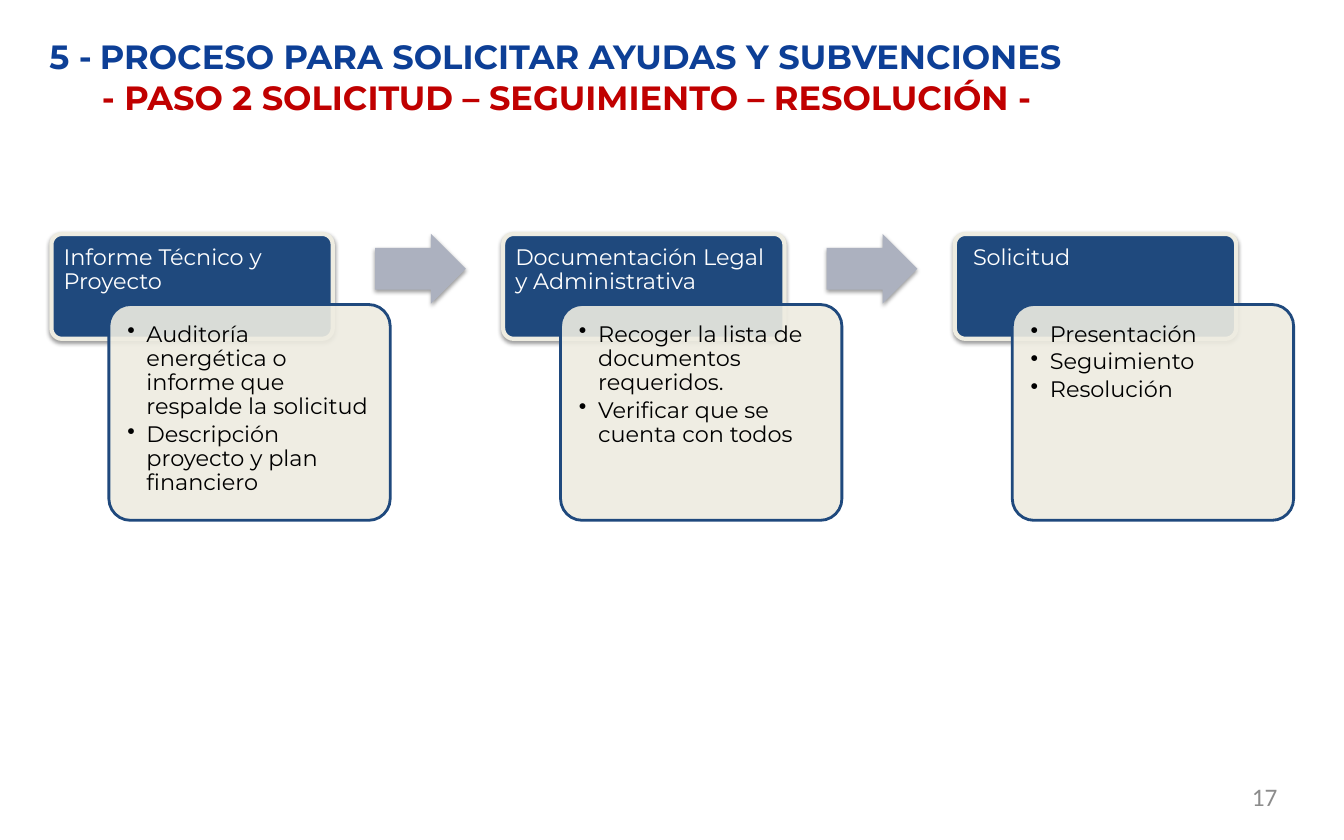
from lxml.etree import SubElement
from pptx import Presentation
from pptx.dml.color import RGBColor
from pptx.enum.shapes import MSO_SHAPE
from pptx.enum.text import MSO_ANCHOR, MSO_AUTO_SIZE, PP_ALIGN
from pptx.oxml.ns import qn
from pptx.util import Inches, Pt

NAVY, CREAM, GREY_BLUE = "1F497D", "EEECE1", "ACB1BF"
TITLE_BLUE, TITLE_RED, NUMBER_GREY = "0D3F96", "C00000", "8C8C8C"

# Grid of the process, in inches
FIRST_LEFT, COLUMN_PITCH = 0.51, 4.48
HEADER_TOP, DETAIL_TOP = 2.32, 3.02
BOX_WIDTH, HEADER_HEIGHT, DETAIL_HEIGHT = 2.79, 1.04, 2.14
DETAIL_SHIFT, ARROW_SHIFT = 0.57, 3.21

# Heading, its indent, and the details below it
STEPS = [
    ("Informe Técnico y Proyecto", 0,
     ["Auditoría energética o informe que respalde la solicitud",
      "Descripción proyecto y plan financiero"]),
    ("Documentación Legal y Administrativa", 0,
     ["Recoger la lista de documentos requeridos.",
      "Verificar que se cuenta con todos"]),
    ("Solicitud", 0.06, ["Presentación", "Seguimiento", "Resolución"]),
]


def color(hex_value):
    return RGBColor.from_string(hex_value)


def add_element(parent, tag, **attributes):
    return SubElement(parent, qn(tag), {name: str(value) for name, value in attributes.items()})


def prepare_frame(frame, inset_x, inset_y):
    frame.word_wrap = True
    frame.auto_size = MSO_AUTO_SIZE.NONE
    frame.vertical_anchor = MSO_ANCHOR.TOP
    frame.margin_left = frame.margin_right = Inches(inset_x)
    frame.margin_top = frame.margin_bottom = Inches(inset_y)


def write_paragraph(frame, text, first=False, size=16, font="Montserrat", ink="000000", bold=False,
                    align=PP_ALIGN.LEFT, spacing=1.0, after=0, indent=0, bullet=False, tab=None):
    paragraph = frame.paragraphs[0] if first else frame.add_paragraph()
    properties = paragraph._p.get_or_add_pPr()
    properties.set("marL", str(Inches(indent)))
    properties.set("indent", str(-Inches(indent) if bullet else 0))
    if bullet:
        add_element(properties, "a:buChar", char="•")
    if tab:
        add_element(add_element(properties, "a:tabLst"), "a:tab", pos=Inches(tab), algn="l")
    paragraph.alignment = align
    paragraph.line_spacing = spacing
    paragraph.space_after = Pt(after)
    run = paragraph.add_run()
    run.text = text
    run.font.size, run.font.name, run.font.bold = Pt(size), font, bold
    run.font.color.rgb = color(ink)


def add_panel(slide, kind, left, top, width, height, fill, adjustments, line=None, line_width=0):
    shape = slide.shapes.add_shape(kind, Inches(left), Inches(top), Inches(width), Inches(height))
    for index, value in enumerate(adjustments):
        shape.adjustments[index] = value
    shape.shadow.inherit = False
    shape.fill.solid()
    shape.fill.fore_color.rgb = color(fill)
    if line:
        shape.line.color.rgb = color(line)
        shape.line.width = Pt(line_width)
    else:
        shape.line.fill.background()
    return shape


def add_drop_shadow(shape):
    effects = shape.element.spPr.find(qn("a:effectLst"))
    shadow = add_element(effects, "a:outerShdw", blurRad=Pt(3.1), dist=Pt(1.6),
                         dir=5400000, rotWithShape=0)
    add_element(add_element(shadow, "a:srgbClr", val="000000"), "a:alpha", val=38000)


def set_opacity(shape, percent):
    fill = shape.element.spPr.find(qn("a:solidFill"))
    add_element(fill[0], "a:alpha", val=percent * 1000)


def add_step(slide, left, heading, heading_indent, details):
    header = add_panel(slide, MSO_SHAPE.ROUNDED_RECTANGLE, left, HEADER_TOP, BOX_WIDTH,
                       HEADER_HEIGHT, NAVY, [0.1], CREAM, 3)
    add_drop_shadow(header)
    prepare_frame(header.text_frame, 0.09, 0.09)
    write_paragraph(header.text_frame, heading, first=True, ink="FFFFFF", spacing=0.9,
                    indent=heading_indent)

    detail = add_panel(slide, MSO_SHAPE.ROUNDED_RECTANGLE, left + DETAIL_SHIFT, DETAIL_TOP,
                       BOX_WIDTH, DETAIL_HEIGHT, CREAM, [0.1], NAVY, 2)
    set_opacity(detail, 90)
    prepare_frame(detail.text_frame, 0.12, 0.12)
    for index, text in enumerate(details):
        write_paragraph(detail.text_frame, text, first=index == 0, spacing=0.9, after=2.4,
                        indent=0.19, bullet=True)


def add_arrow(slide, left):
    arrow = add_panel(slide, MSO_SHAPE.RIGHT_ARROW, left, HEADER_TOP, 0.9, 0.69,
                      GREY_BLUE, [0.6, 0.5])
    add_drop_shadow(arrow)


def format_title(title):
    title.left, title.top = Inches(0.39), Inches(0.31)
    title.width, title.height = Inches(11.2), Inches(0.91)
    prepare_frame(title.text_frame, 0.1, 0.05)
    write_paragraph(title.text_frame, "5 -\tPROCESO PARA SOLICITAR AYUDAS Y SUBVENCIONES",
                    first=True, size=24, ink=TITLE_BLUE, bold=True, tab=0.7)
    write_paragraph(title.text_frame, "- PASO 2 SOLICITUD – SEGUIMIENTO – RESOLUCIÓN -",
                    size=24, ink=TITLE_RED, bold=True, indent=0.52)


def add_page_number(slide, number):
    box = slide.shapes.add_textbox(Inches(9.6), Inches(7.75), Inches(3.07), Inches(0.42))
    prepare_frame(box.text_frame, 0, 0)
    write_paragraph(box.text_frame, number, first=True, size=18, font="Calibri",
                    ink=NUMBER_GREY, align=PP_ALIGN.RIGHT)


def main():
    presentation = Presentation()
    presentation.slide_width, presentation.slide_height = Inches(13.33), Inches(8.33)
    slide = presentation.slides.add_slide(presentation.slide_layouts[5])
    format_title(slide.shapes.title)
    for column, (heading, heading_indent, details) in enumerate(STEPS):
        left = FIRST_LEFT + column * COLUMN_PITCH
        add_step(slide, left, heading, heading_indent, details)
        if column < len(STEPS) - 1:
            add_arrow(slide, left + ARROW_SHIFT)
    add_page_number(slide, "17")
    presentation.save("out.pptx")


if __name__ == "__main__":
    main()
